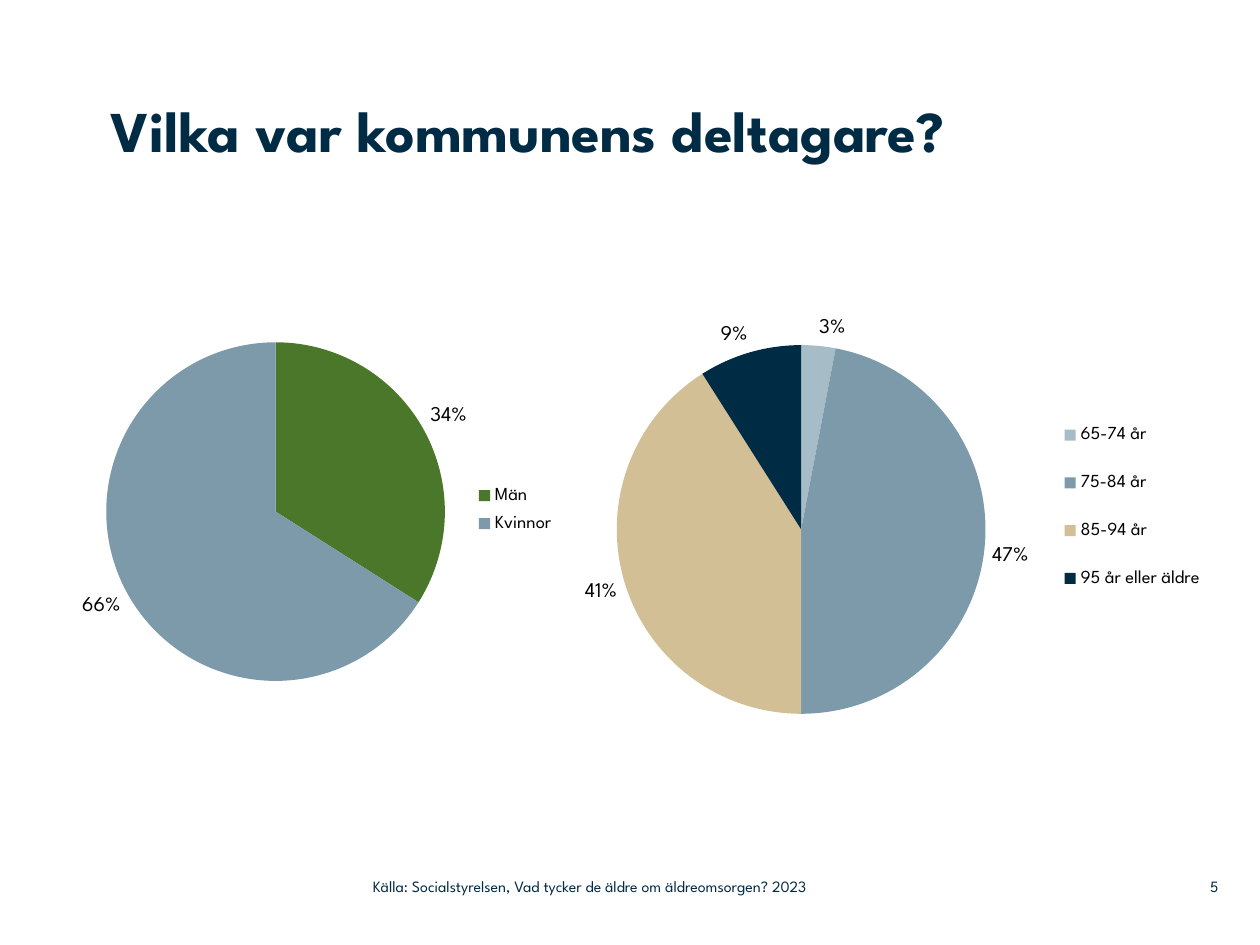
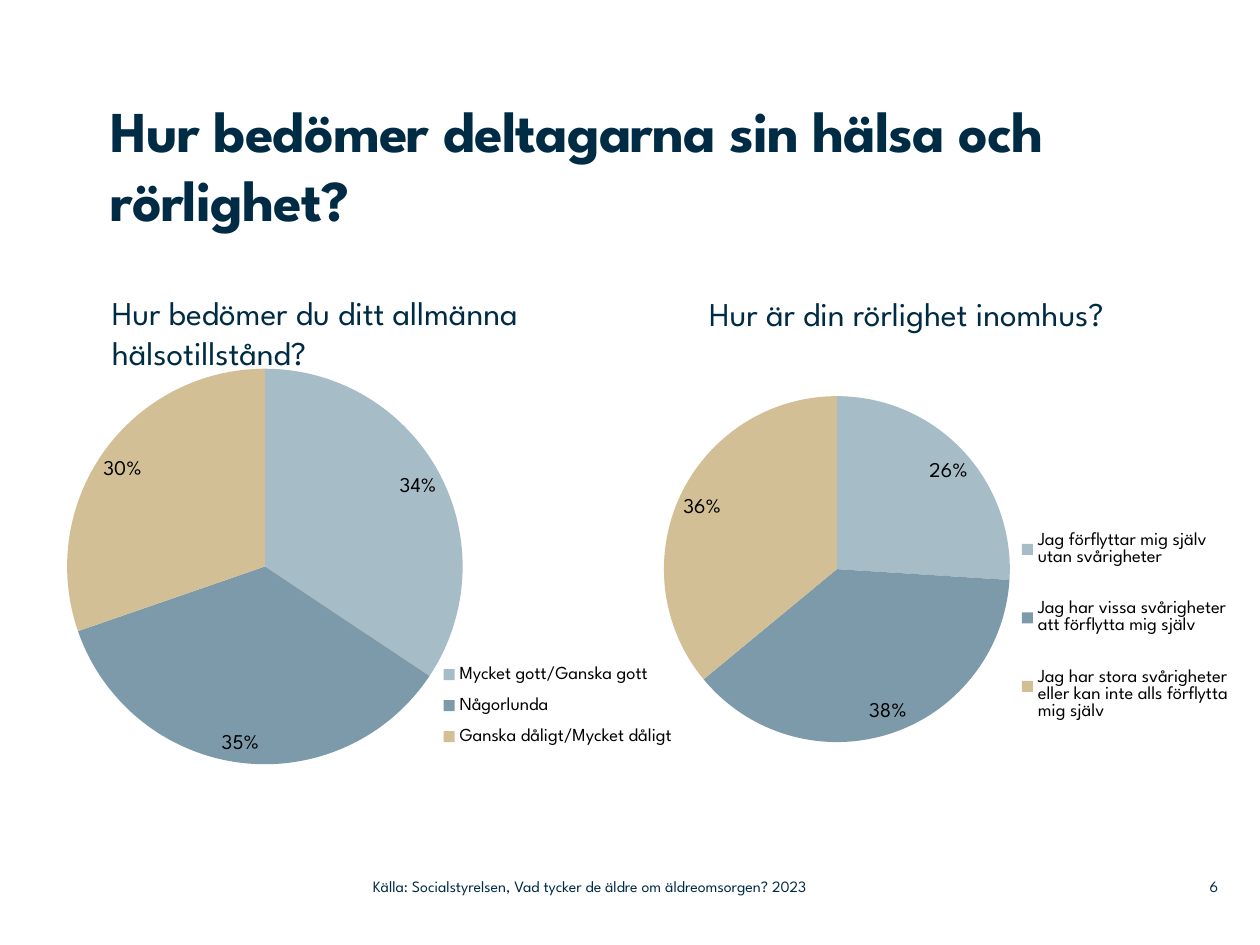
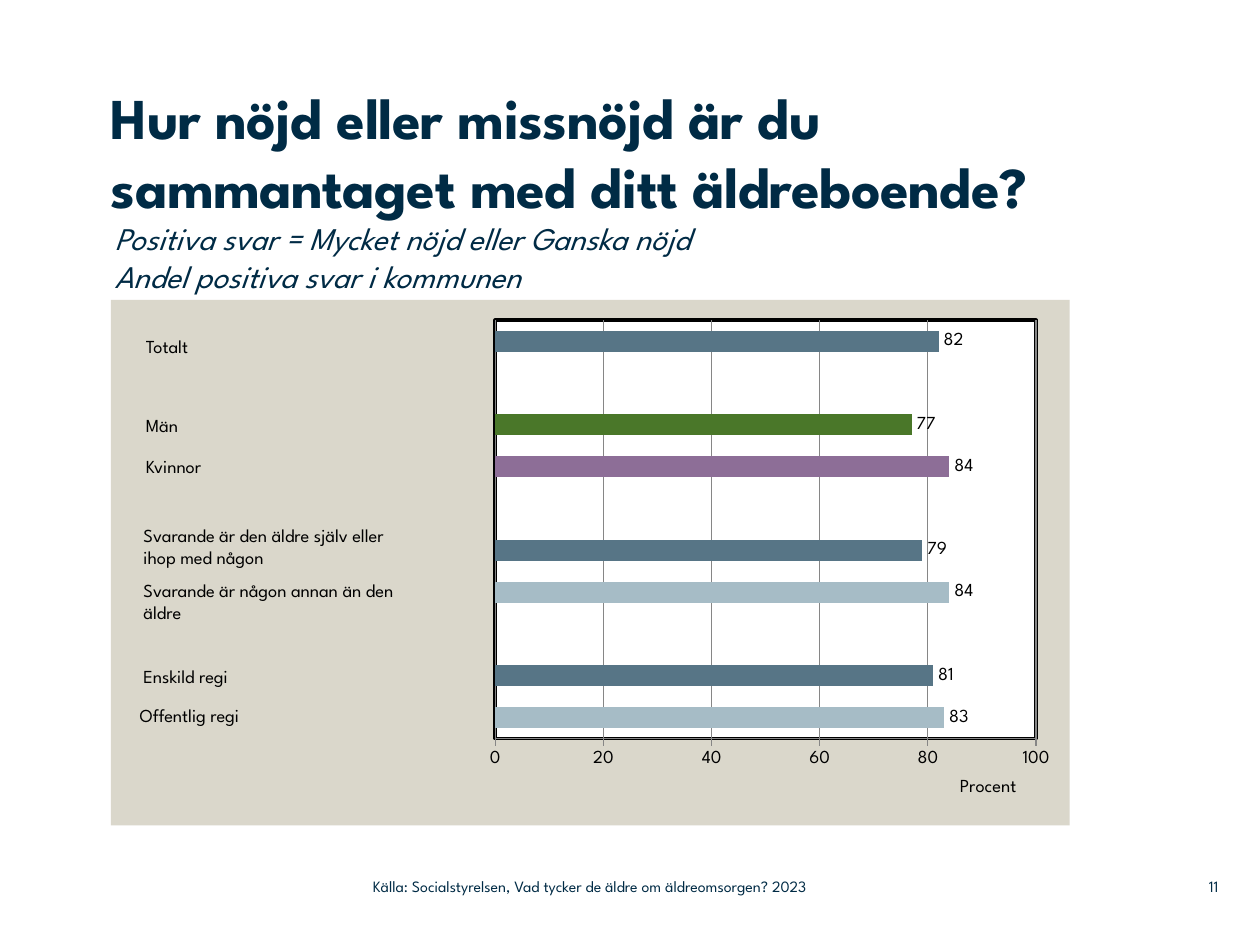
import pptx
import pptx.chart.data
import pptx.dml.color
import pptx.enum.chart
import pptx.enum.text
import pptx.oxml
import pptx.oxml.ns
import pptx.util

# The slide is a grid of 100 columns by 75 rows; boxes are left, top, width, height
COLUMNS, ROWS = 100, 75
SLIDE_WIDTH, SLIDE_HEIGHT = pptx.util.Inches(10), pptx.util.Inches(7.5)
FONT = "League Spartan"
COLOURS = {
    "navy": "002B45", "black": "000000", "white": "FFFFFF", "sand": "DAD7CB",
    "grid": "868686", "green": "4A7729", "blue": "7D9AAA", "pale": "A6BCC6",
    "beige": "D3BF96", "slate": "577586", "purple": "8D6E97",
}
FORMATS = {
    "title": {"size": 33, "bold": True, "colour": "navy"},
    "heading": {"size": 19, "colour": "navy"},
    "subtitle": {"size": 18, "italic": True, "colour": "navy"},
    "footer": {"size": 9, "colour": "navy"},
    "label": {"size": 10.5, "bold": False, "colour": "black"},
    "percent": {"size": 12, "colour": "black"},
}
SOURCE = "Källa: Socialstyrelsen, Vad tycker de äldre om äldreomsorgen? 2023"
SOURCE_BOX = (29.6, 68.9, 44.3, 2.9)
NUMBER_BOX = (92, 68.9, 4.7, 2.9)
LABEL_POSITION = pptx.enum.chart.XL_LABEL_POSITION


# Shared helpers
def colour(name):
    return pptx.dml.color.RGBColor.from_string(COLOURS[name])


def place(box):
    left, top, width, height = box
    return (int(SLIDE_WIDTH * left / COLUMNS), int(SLIDE_HEIGHT * top / ROWS),
            int(SLIDE_WIDTH * width / COLUMNS), int(SLIDE_HEIGHT * height / ROWS))


def format_font(font, style):
    font.name = FONT
    for name, value in FORMATS[style].items():
        if name == "colour":
            font.color.rgb = colour(value)
        else:
            setattr(font, name, pptx.util.Pt(value) if name == "size" else value)


def write_lines(frame, lines, style, align="LEFT", anchor="TOP", inset=True, spacing=0):
    frame.word_wrap = True
    frame.auto_size = pptx.enum.text.MSO_AUTO_SIZE.NONE
    frame.vertical_anchor = getattr(pptx.enum.text.MSO_ANCHOR, anchor)
    if not inset:
        for side in ("left", "top", "right", "bottom"):
            setattr(frame, "margin_" + side, 0)
    paragraph = frame.paragraphs[0]
    paragraph.alignment = getattr(pptx.enum.text.PP_ALIGN, align)
    paragraph.line_spacing = 1.0
    paragraph.space_before = pptx.util.Pt(0)
    for index, line in enumerate(lines):
        if index:
            paragraph.add_line_break()
        run = paragraph.add_run()
        run.text = line
        format_font(run.font, style)
        if spacing:
            run.font._element.set("spc", str(spacing))


def add_text(slide, box, lines, style, **options):
    write_lines(slide.shapes.add_textbox(*place(box)).text_frame, lines, style, **options)


def add_slide(presentation, number, title, box, spacing=0):
    slide = presentation.slides.add_slide(presentation.slide_layouts[5])
    shape = slide.shapes.title
    shape.left, shape.top, shape.width, shape.height = place(box)
    write_lines(shape.text_frame, title, "title", inset=False, spacing=spacing)
    add_text(slide, SOURCE_BOX, [SOURCE], "footer", anchor="MIDDLE", inset=False)
    add_text(slide, NUMBER_BOX, [str(number)], "footer", align="RIGHT",
             anchor="MIDDLE", inset=False)
    return slide


# Chart helpers
def chart_xml(content):
    tag, rest = content.split(">", 1)
    return pptx.oxml.parse_xml(
        tag + " " + pptx.oxml.ns.nsdecls("c", "a") + ">" + rest)


def set_layout(element, shares, after=None, inner=False):
    """Fix an element's place as shares of the chart's size."""
    for old in element.findall(pptx.oxml.ns.qn("c:layout")):
        element.remove(old)
    target = '<c:layoutTarget val="inner"/>' if inner else ""
    modes = "".join(f'<c:{axis}Mode val="edge"/>' for axis in "xy")
    sizes = "".join(f'<c:{axis} val="{share}"/>' for axis, share in zip("xywh", shares))
    layout = chart_xml(
        f"<c:layout><c:manualLayout>{target}{modes}{sizes}</c:manualLayout></c:layout>")
    if after:
        element.find(pptx.oxml.ns.qn(after)).addnext(layout)
    else:
        element.insert(0, layout)


def area_style(fill, line):
    return chart_xml(
        f'<c:spPr><a:solidFill><a:srgbClr val="{COLOURS[fill]}"/></a:solidFill>{line}</c:spPr>')


def add_chart(slide, box, kind, categories, values, point_colours, plot_shares):
    data = pptx.chart.data.CategoryChartData()
    data.categories = categories
    data.add_series("Series 1", values)
    kind = getattr(pptx.enum.chart.XL_CHART_TYPE, kind)
    chart = slide.shapes.add_chart(kind, *place(box), data).chart
    chart.has_title = False
    chart.has_legend = False
    format_font(chart.font, "label")
    plot = chart.plots[0]
    set_layout(plot._element.getparent(), plot_shares, inner=True)
    for index, name in enumerate(point_colours):
        if name:
            fill = plot.series[0].points[index].format.fill
            fill.solid()
            fill.fore_color.rgb = colour(name)
    plot.has_data_labels = True
    return chart


def add_pie(slide, box, answers, point_colours, plot_shares, legend_shares, position):
    chart = add_chart(slide, box, "PIE", list(answers), list(answers.values()),
                      point_colours, plot_shares)
    plot = chart.plots[0]
    plot.vary_by_categories = True
    settings = {"show_percentage": True, "show_value": False, "number_format": "0%",
                "number_format_is_linked": False, "position": position}
    for name, value in settings.items():
        setattr(plot.data_labels, name, value)
    format_font(plot.data_labels.font, "percent")
    chart.has_legend = True
    chart.legend.position = pptx.enum.chart.XL_LEGEND_POSITION.RIGHT
    chart.legend.include_in_layout = False
    format_font(chart.legend.font, "label")
    set_layout(chart.legend._element, legend_shares, after="c:legendPos")


def add_satisfaction_panel(slide, box):
    # Bars from the bottom up; gaps separate the groups
    values = [83, 81, None, 84, 79, None, 84, 77, None, 82]
    bar_colours = ["pale", "slate", None, "pale", "slate", None,
                   "purple", "green", None, "slate"]
    chart = add_chart(slide, box, "BAR_CLUSTERED", [str(n + 1) for n in range(len(values))],
                      values, bar_colours, (0.4, 0.04, 0.56, 0.8))
    plot = chart.plots[0]
    set_layout(plot._element.getparent(), (0.401, 0.039, 0.564, 0.796), inner=True)
    plot.vary_by_categories = False
    plot.gap_width = 100
    plot.data_labels.show_value = True
    plot.data_labels.position = LABEL_POSITION.OUTSIDE_END
    format_font(plot.data_labels.font, "label")

    # Panel and plot backgrounds
    plot_area = plot._element.getparent()
    border = (f'<a:ln w="28575" cmpd="dbl"><a:solidFill><a:srgbClr val="{COLOURS["black"]}"/>'
              "</a:solidFill></a:ln>")
    plot_area.append(area_style("white", border))
    plot_area.getparent().addnext(area_style("sand", "<a:ln><a:noFill/></a:ln>"))

    # Axes
    chart.category_axis.visible = False
    axis = chart.value_axis
    settings = {"minimum_scale": 0, "maximum_scale": 100, "major_unit": 20,
                "has_major_gridlines": True,
                "major_tick_mark": pptx.enum.chart.XL_TICK_MARK.OUTSIDE}
    for name, value in settings.items():
        setattr(axis, name, value)
    for line in (axis.format.line, axis.major_gridlines.format.line):
        line.color.rgb = colour("grid")
        line.width = pptx.util.Pt(0.75)
    format_font(axis.tick_labels.font, "label")
    run = axis.axis_title.text_frame.paragraphs[0].add_run()
    run.text = "Procent"
    format_font(run.font, "label")
    set_layout(axis.axis_title._element, (0.882, 0.903), after="c:tx")

    # Row labels: column and row inside the panel
    labels = [
        (1.8, 2.3, ["Totalt"]),
        (1.8, 8.6, ["Män"]),
        (1.8, 11.8, ["Kvinnor"]),
        (1.6, 17.3, ["Svarande är den äldre själv eller", "ihop med någon"]),
        (1.6, 21.7, ["Svarande är någon annan än den", "äldre"]),
        (1.6, 28.5, ["Enskild regi"]),
        (1.3, 31.6, ["Offentlig regi"]),
    ]
    for column, row, lines in labels:
        height = 1 + 1.75 * len(lines)
        add_text(slide, (box[0] + column, box[1] + row, 26.5, height), lines, "label")


# Slides
def participants_slide(presentation):
    slide = add_slide(presentation, 5, ["Vilka var kommunens deltagare?"],
                      (8.8, 7.5, 76, 14.2))
    add_pie(slide, (-2.3, 23.1, 54.2, 34.2), {"Män": 34, "Kvinnor": 66},
            ["green", "blue"], (0.198, 0.119, 0.496, 0.786),
            (0.717, 0.43, 0.16, 0.155), LABEL_POSITION.OUTSIDE_END)
    add_pie(slide, (43.1, 23.9, 54.2, 34.2),
            {"65-74 år": 3, "75-84 år": 47, "85-94 år": 41, "95 år eller äldre": 9},
            ["pale", "blue", "beige", "navy"], (0.108, 0.102, 0.54, 0.856),
            (0.748, 0.22, 0.23, 0.515), LABEL_POSITION.OUTSIDE_END)


def health_slide(presentation):
    slide = add_slide(presentation, 6, ["Hur bedömer deltagarna sin hälsa och rörlighet?"],
                      (8.8, 7.5, 82.7, 11.2), spacing=-50)
    add_text(slide, (7.9, 22.7, 40.7, 7.4),
             ["Hur bedömer du ditt allmänna hälsotillstånd?"], "heading")
    add_text(slide, (55.3, 22.8, 37.1, 7.4), ["Hur är din rörlighet inomhus?"], "heading")
    shades = ["pale", "blue", "beige"]
    add_pie(slide, (3.9, 27.9, 54.2, 34.2),
            {"Mycket gott/Ganska gott": 34, "Någorlunda": 35,
             "Ganska dåligt/Mycket dåligt": 30},
            shades, (0.026, 0.04, 0.58, 0.918), (0.565, 0.698, 0.36, 0.248),
            LABEL_POSITION.BEST_FIT)
    add_pie(slide, (49, 28.1, 54.2, 40.8),
            {"Jag förflyttar mig själv utan svårigheter": 26,
             "Jag har vissa svårigheter att förflytta mig själv": 38,
             "Jag har stora svårigheter eller kan inte alls förflytta mig själv": 36},
            shades, (0.068, 0.082, 0.507, 0.673), (0.591, 0.28, 0.305, 0.5),
            LABEL_POSITION.BEST_FIT)


def satisfaction_slide(presentation):
    slide = add_slide(presentation, 11,
                      ["Hur nöjd eller missnöjd är du", "sammantaget med ditt äldreboende?"],
                      (8.8, 6.5, 83.6, 12), spacing=-30)
    add_text(slide, (9.1, 17.4, 64.9, 6.3),
             ["Positiva svar = Mycket nöjd eller Ganska nöjd",
              "Andel positiva svar i kommunen"], "subtitle", inset=False)
    add_satisfaction_panel(slide, (8.8, 23.8, 76.1, 41.7))


def main():
    presentation = pptx.Presentation()
    presentation.slide_width, presentation.slide_height = SLIDE_WIDTH, SLIDE_HEIGHT
    participants_slide(presentation)
    health_slide(presentation)
    satisfaction_slide(presentation)
    presentation.save("out.pptx")


if __name__ == "__main__":
    main()
